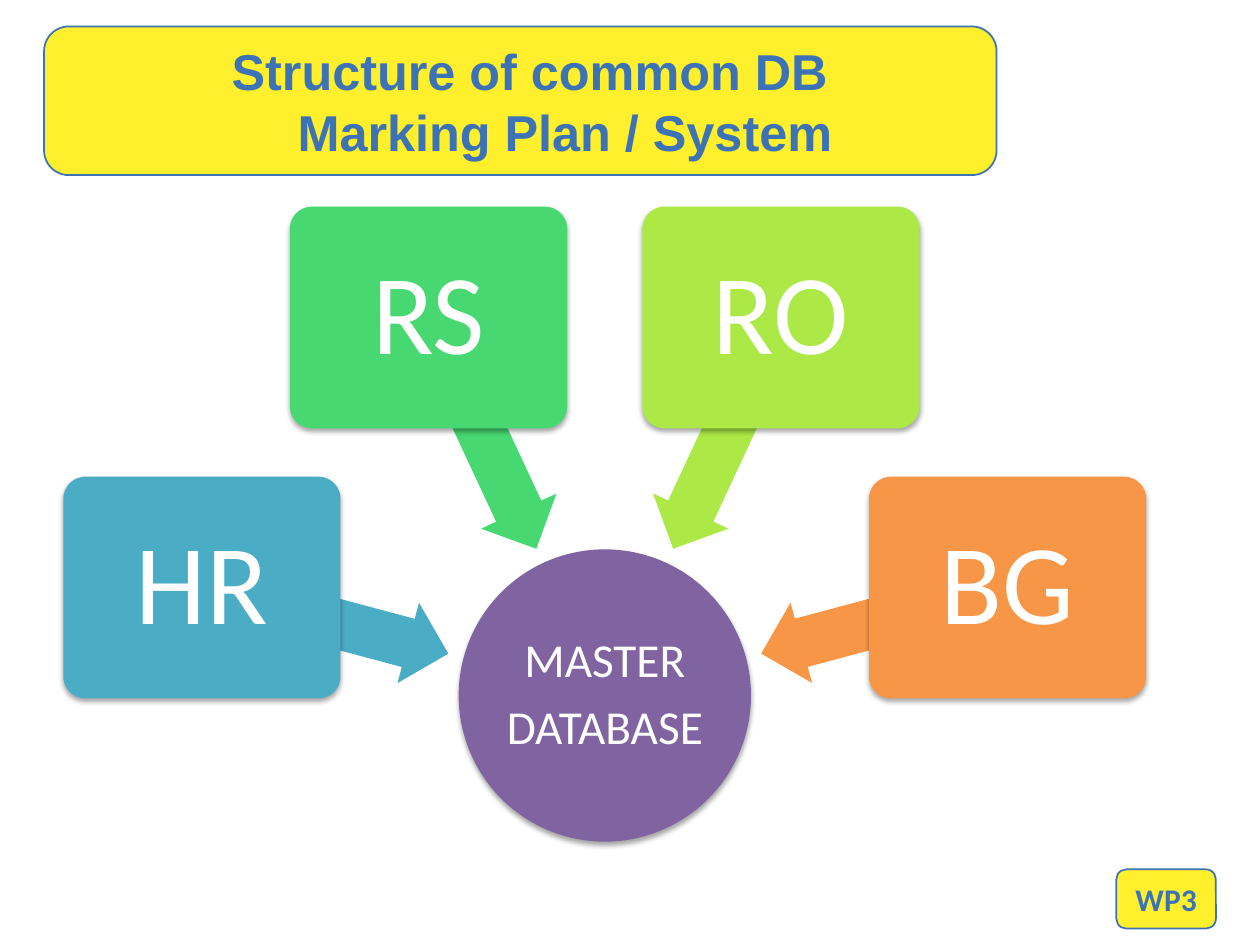
import math
from lxml import etree
from pptx import Presentation
from pptx import util as u
from pptx.dml.color import RGBColor
from pptx.enum import shapes, text
from pptx.oxml.ns import qn

YELLOW, BLUE, WHITE = "FFEF2D", "3C73B4", "FFFFFF"
COUNTRIES = [("HR", 195, "4BACC6"), ("RS", 245, "47D872"),
             ("RO", 295, "ACE946"), ("BG", 345, "F79646")]


def colour(fmt, hex_code):
    """Set a font colour, or a fill or line, to a hex colour."""
    if hasattr(fmt, "solid"):
        fmt.solid()
        fmt = fmt.fore_color
    else:
        fmt = fmt.color
    fmt.rgb = RGBColor.from_string(hex_code)


def add_shape(s, kind, box, fill, line=None):
    """Add a flat preset shape, with an outline if a line colour is given."""
    sp = s.shapes.add_shape(kind, *[u.Inches(v) for v in box])
    sp.shadow.inherit = False
    colour(sp.fill, fill)
    if line:
        colour(sp.line, line)
        sp.line.width = u.Pt(1)
    else:
        sp.line.fill.background()
    return sp


def add_shadow(sp):
    """Give a shape a soft shadow straight below it."""
    effects = sp._element.spPr.find(qn("a:effectLst"))
    shadow = etree.SubElement(effects, qn("a:outerShdw"), blurRad=str(u.Pt(3.1)),
                              dist=str(u.Pt(1.8)), dir="5400000", rotWithShape="0")
    black = etree.SubElement(shadow, qn("a:srgbClr"), val="000000")
    etree.SubElement(black, qn("a:alpha"), val="35000")


def write(sp, lines, size, hex_code, font="Calibri", bold=False, inset=0.05, gap=0):
    """Write centred paragraphs in a shape."""
    tf = sp.text_frame
    tf.text = "\n".join(lines)
    tf.word_wrap = True
    tf.auto_size = text.MSO_AUTO_SIZE.NONE
    tf.vertical_anchor = text.MSO_ANCHOR.MIDDLE
    tf.margin_left = tf.margin_right = tf.margin_top = tf.margin_bottom = u.Inches(inset)
    for i, p in enumerate(tf.paragraphs):
        p.alignment = text.PP_ALIGN.CENTER
        if gap:
            p.line_spacing = 0.9
        if i < len(lines) - 1:
            p.space_after = u.Pt(gap)
        p.font.name, p.font.size, p.font.bold = font, u.Pt(size), bold
        colour(p.font, hex_code)


def add_title(s, x, y, w, h):
    """Put the slide title on a yellow banner."""
    banner = add_shape(s, shapes.MSO_SHAPE.ROUNDED_RECTANGLE, (x, y, w, h), YELLOW, BLUE)
    title = s.shapes.title
    title._element.addprevious(banner._element)
    title.left, title.top = u.Inches(x + 0.15), u.Inches(y + 0.08)
    title.width, title.height = u.Inches(w - 0.15), u.Inches(h - 0.16)
    write(title, ["Structure of common DB\vMarking Plan / System"], 28.8, BLUE, "Arial", True)
    pPr = title.text_frame.paragraphs[0]._p.get_or_add_pPr()
    pPr.set("marL", str(u.Inches(0.56)))
    pPr.set("indent", str(-u.Inches(0.56)))


def add_tag(s, x, y, w, h):
    """Add the work package tag."""
    tag = add_shape(s, shapes.MSO_SHAPE.ROUNDED_RECTANGLE, (x, y, w, h), YELLOW, BLUE)
    write(tag, ["WP3"], 18, BLUE, bold=True)


def add_hub(s, x, y, size):
    """Add the database circle with the countries fanned around it."""
    cx, cy = x + size / 2, y + size / 2
    hub = add_shape(s, shapes.MSO_SHAPE.OVAL, (x, y, size, size), "8064A2")
    add_shadow(hub)
    write(hub, ["MASTER", "DATABASE"], 27, WHITE, inset=0.02, gap=9.45)

    def around(angle, radius, w, h):
        """Return a box centred at an angle and radius from the hub."""
        a = math.radians(angle)
        return cx + radius * math.cos(a) - w / 2, cy + radius * math.sin(a) - h / 2, w, h

    for name, angle, fill in COUNTRIES:
        arrow = add_shape(s, shapes.MSO_SHAPE.LEFT_ARROW, around(angle, 2.3, 2.03, 0.66), fill)
        arrow.adjustments[0], arrow.adjustments[1] = 0.6, 0.5
        arrow.rotation = angle
        card = add_shape(s, shapes.MSO_SHAPE.ROUNDED_RECTANGLE,
                         around(angle, 3.31, 2.2, 1.76), fill)
        card.adjustments[0] = 0.1
        add_shadow(card)
        write(card, [name], 65, WHITE, inset=0.14, gap=22.75)


def main():
    """Build and save the slide."""
    prs = Presentation()
    prs.slide_width, prs.slide_height = u.Inches(10), u.Inches(7.5)
    s = prs.slides.add_slide(prs.slide_layouts[5])
    add_title(s, 0.35, 0.21, 7.56, 1.18)
    add_tag(s, 8.86, 6.9, 0.79, 0.47)
    add_hub(s, 3.64, 4.36, 2.32)
    prs.save("out.pptx")


if __name__ == "__main__":
    main()
